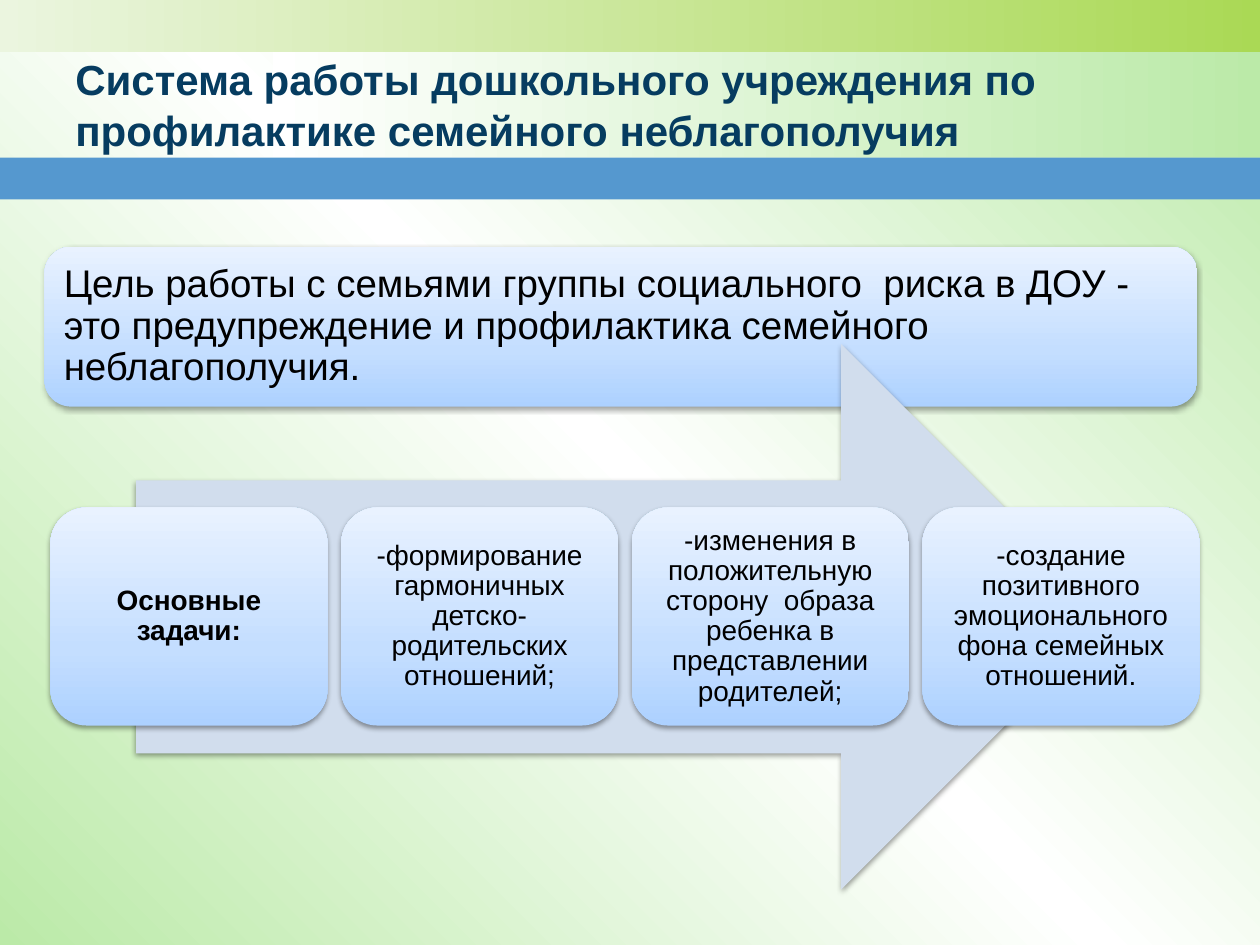
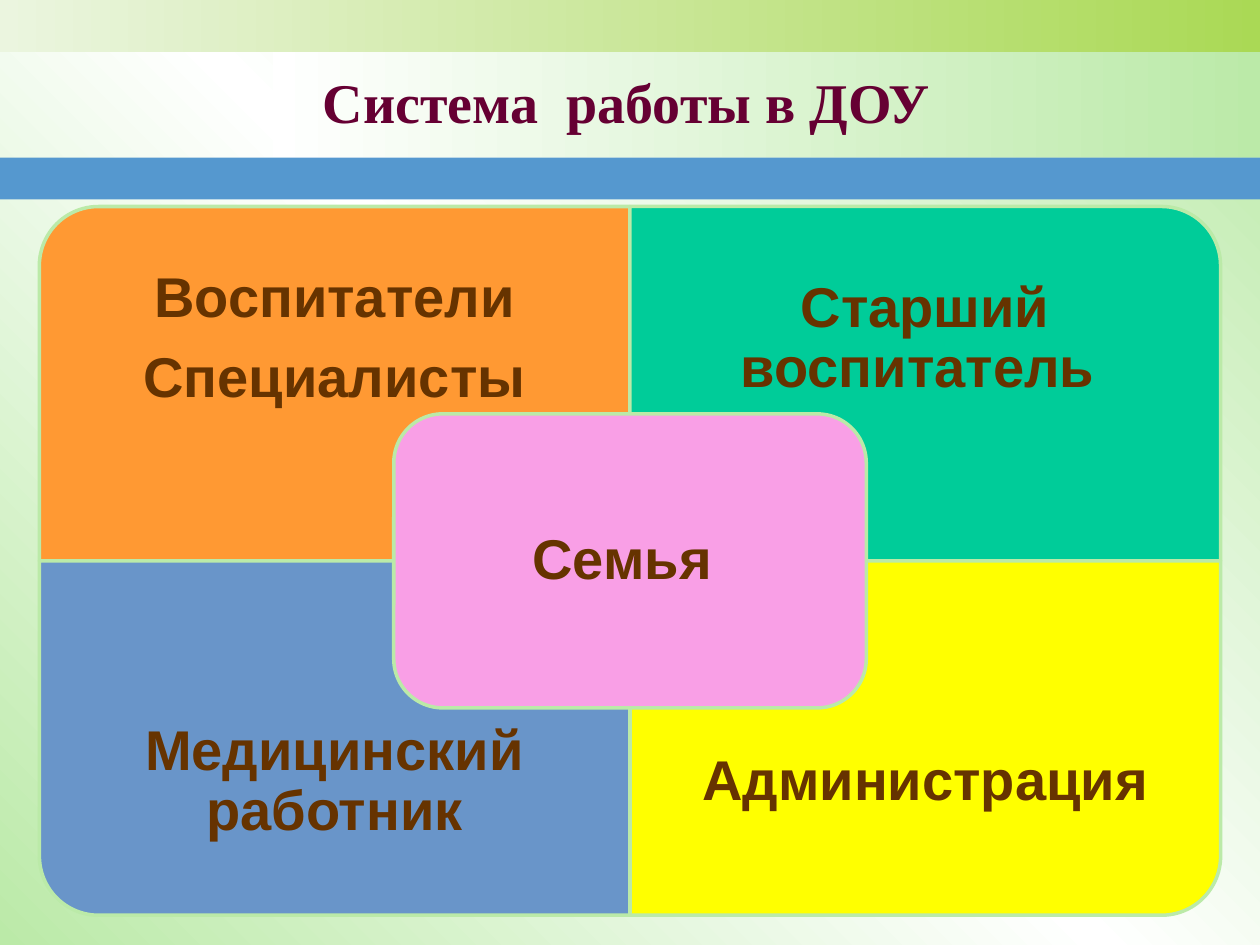
from typing import NamedTuple

from lxml.etree import SubElement as Sub
from pptx import Presentation
from pptx.dml.color import RGBColor
from pptx.enum.shapes import MSO_SHAPE as Form
from pptx.enum.text import MSO_ANCHOR as Anchor, PP_ALIGN as Align
from pptx.oxml.ns import qn
from pptx.shapes.autoshape import Shape
from pptx.slide import Slide
from pptx.util import Pt

WIDE, HIGH = 720, 540
PALE = "BBEAA8"
BROWN = "663300"
GOAL = "Цель работы с семьями группы социального  риска в ДОУ - это предупреждение и профилактика семейного неблагополучия."


class Blend(NamedTuple):
    """Gradient: (percent, colour) stops and a clockwise angle in degrees."""
    stops: tuple
    angle: int = 0


class Box(NamedTuple):
    left: float
    top: float
    width: float
    height: float


class Band(NamedTuple):
    box: Box
    fill: Blend | str


class Zone(NamedTuple):
    text: str
    fill: str
    col: int
    row: int
    turn: int


MEADOW = Blend(((0, PALE), (50, "FFFFFF"), (100, PALE)), 315)
SKY = Blend(((0, "ADD1FF"), (35, "C4DEFF"), (100, "E9F2FF")), 270)
BANDS = (
    Band(Box(0, 0, WIDE, 30), Blend(((0, "EBF5DF"), (100, "AAD955")))),
    Band(Box(156, 30, WIDE - 156, 60), Blend(((0, "FFFFFF"), (100, PALE)))),
    Band(Box(0, 90, WIDE, 24), "5598CF"),
)
TASKS = (
    "Основные задачи:",
    "-формирование гармоничных детско-родительских отношений;",
    "-изменения в положительную сторону  образа ребенка в представлении родителей;",
    "-создание позитивного эмоционального фона семейных отношений.",
)
ZONES = (
    Zone("Воспитатели\nСпециалисты", "FF9933", 0, 0, 270),
    Zone("Старший воспитатель ", "00CC99", 1, 0, 0),
    Zone("Медицинский работник", "6995C9", 0, 1, 180),
    Zone("Администрация", "FFFF00", 1, 1, 90),
)


def tint(code: str) -> RGBColor:
    return RGBColor.from_string(code)


def paint(item: Shape | Slide, fill: Blend | str) -> None:
    """Fill a shape or a slide background with a colour or a blend."""
    slide = isinstance(item, Slide)
    format = item.background.fill if slide else item.fill
    format.solid()
    if isinstance(fill, str):
        format.fore_color.rgb = tint(fill)
        return
    host = item.element.find(".//" + qn("p:bgPr" if slide else "p:spPr"))
    solid = host.find(qn("a:solidFill"))
    grad = host.makeelement(qn("a:gradFill"), {"rotWithShape": "1"})
    stops = Sub(grad, qn("a:gsLst"))
    for place, code in fill.stops:
        stop = Sub(stops, qn("a:gs"), pos=str(place * 1000))
        Sub(stop, qn("a:srgbClr"), val=code)
    Sub(grad, qn("a:lin"), ang=str(fill.angle * 60000), scaled="0")
    host.replace(solid, grad)


def shade(shape: Shape) -> None:
    """Cast a soft shadow straight down."""
    outer = Sub(shape.element.spPr.find(qn("a:effectLst")), qn("a:outerShdw"),
                blurRad=str(Pt(3.1)), dist=str(Pt(1.6)), dir="5400000", rotWithShape="0")
    black = Sub(outer, qn("a:srgbClr"), val="000000")
    Sub(black, qn("a:alpha"), val="38000")


def draw(slide: Slide, form: Form, box: Box, fill: Blend | str,
         edge: str = "", soft: bool = False) -> Shape:
    shape = slide.shapes.add_shape(form, *map(Pt, box))
    shape.shadow.inherit = False
    paint(shape, fill)
    if edge:
        shape.line.color.rgb = tint(edge)
        shape.line.width = Pt(2)
    else:
        shape.line.fill.background()
    if soft:
        shade(shape)
    return shape


def write(shape: Shape, text: str, *, size: float, color: str = "000000",
          font: str = "Arial", bold: bool = False, align: Align = Align.CENTER,
          pad: tuple = (7.2, 3.6), lead: float = 0.9, after: float = 0.35) -> None:
    """Set text; pad is (side, top) inset, after is a share of the size."""
    frame = shape.text_frame
    frame.word_wrap = True
    frame.vertical_anchor = Anchor.MIDDLE
    frame.margin_left = frame.margin_right = Pt(pad[0])
    frame.margin_top = frame.margin_bottom = Pt(pad[1])
    frame.text = text
    for para in frame.paragraphs:
        para.alignment = align
        para.line_spacing = lead
        para.space_after = Pt(after * size)
        for run in para.runs:
            run.font.name = font
            run.font.size = Pt(size)
            run.font.bold = bold
            run.font.color.rgb = tint(color)


def label(slide: Slide, box: Box, text: str, **look) -> None:
    write(slide.shapes.add_textbox(*map(Pt, box)), text, **look)


def start(deck, title: str, box: Box, **look) -> Slide:
    """Add a slide with the shared background, bands and title."""
    slide = deck.slides.add_slide(deck.slide_layouts[6])
    paint(slide, MEADOW)
    for band in BANDS:
        draw(slide, Form.RECTANGLE, band.box, band.fill)
    label(slide, box, title, bold=True, lead=1, after=0, **look)
    return slide


def goals(deck) -> None:
    slide = start(deck, "Система работы дошкольного учреждения по профилактике семейного неблагополучия",
                  Box(36, 30, 648, 59), size=24, color="063C60", align=Align.LEFT)
    goal = draw(slide, Form.ROUNDED_RECTANGLE, Box(25.4, 141, 658.8, 91.4), SKY, soft=True)
    write(goal, GOAL, size=22, align=Align.LEFT, pad=(6.6, 6.6))
    draw(slide, Form.RIGHT_ARROW, Box(77.8, 196.6, 558.7, 311.8), "D1DDED", soft=True)
    for rank, task in enumerate(TASKS):
        box = Box(28.8 + 166.1 * rank, 290, 158.4, 124.6)
        card = draw(slide, Form.ROUNDED_RECTANGLE, box, SKY, soft=True)
        write(card, task, size=16, bold=rank == 0, pad=(4.8, 4.8))


def system(deck) -> None:
    slide = start(deck, "Система  работы в ДОУ", Box(34, 28, 648, 59),
                  size=32, color="660033", font="Times New Roman")
    left, top, wide, high, deep = 22.5, 118, 337.5, 202.5, 152
    look = dict(size=32, color=BROWN, bold=True)
    for zone in ZONES:
        x, y = left + zone.col * wide, top + zone.row * high
        box = Box(x, y, wide, high)
        if zone.turn % 180:
            shift = (wide - high) / 2
            box = Box(x + shift, y - shift, high, wide)
        tile = draw(slide, Form.ROUND_1_RECTANGLE, box, zone.fill, PALE)
        tile.rotation = zone.turn
        drop = zone.row * (high - deep)
        label(slide, Box(x, y + drop, wide, deep), zone.text, pad=(18, 18), **look)
    core = Box(left + wide - 135, top + high - 84, 270, 168)
    family = draw(slide, Form.ROUNDED_RECTANGLE, core, "F99FE6", PALE)
    write(family, "Семья ", pad=(9.6, 9.6), **look)


def main() -> None:
    deck = Presentation()
    deck.slide_width, deck.slide_height = Pt(WIDE), Pt(HIGH)
    goals(deck)
    system(deck)
    deck.save("out.pptx")


if __name__ == "__main__":
    main()
